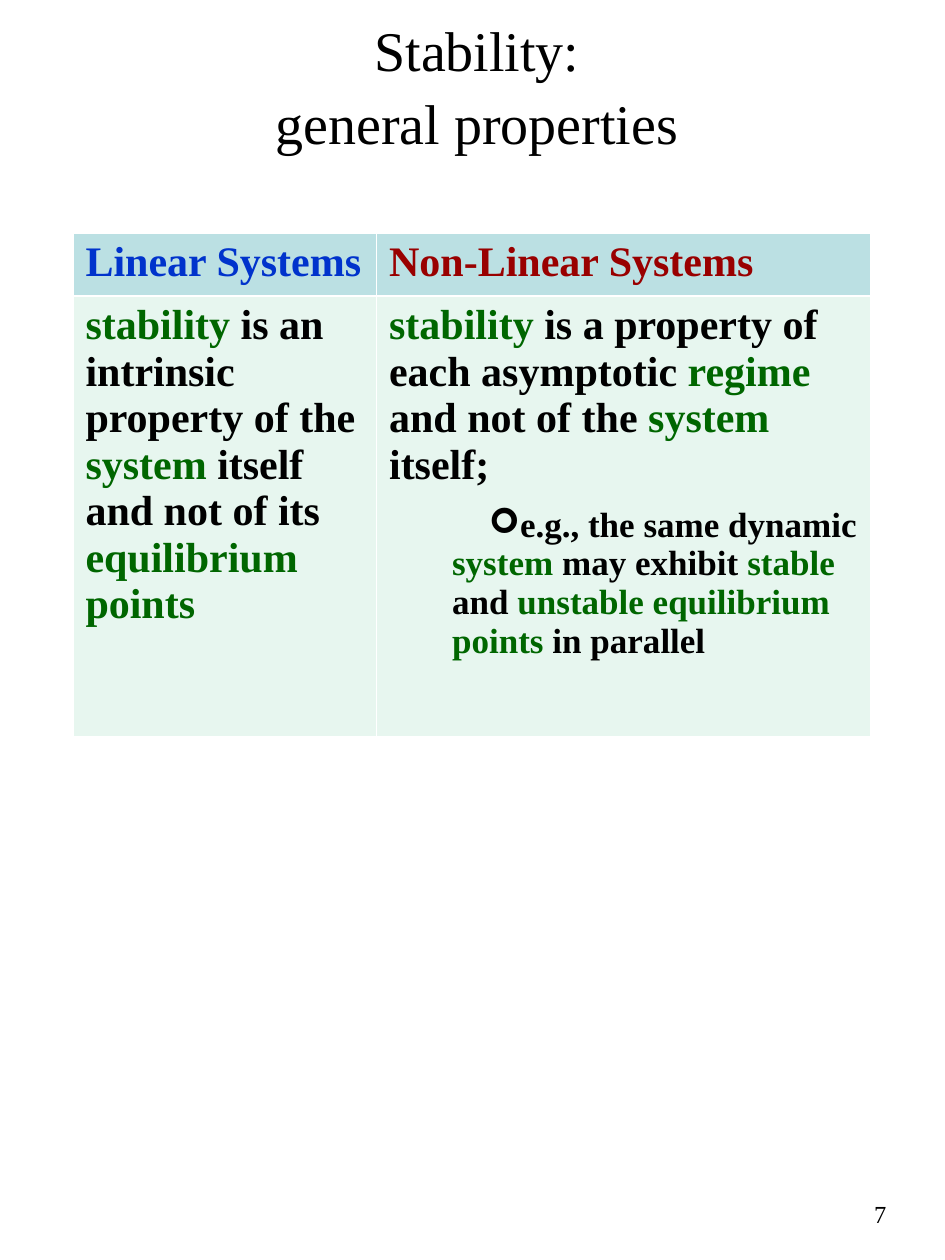
from lxml.etree import SubElement
from pptx import Presentation
from pptx.dml.color import RGBColor
from pptx.enum.text import MSO_ANCHOR, PP_ALIGN
from pptx.oxml.ns import qn
from pptx.util import Cm, Pt

FONT = "Times New Roman"
BLACK, GREEN = "000000", "006600"
BLUE, RED = "0033CC", "990000"
HEAD, BODY = "BBE0E3", "E7F6EF"

LINEAR = ("*stability* is an intrinsic property of the *system* itself "
          "and not of its *equilibrium points*")
OTHER = ("*stability* is a property of each asymptotic *regime* "
         "and not of the *system* itself;")
CASE = ("e.g., the same dynamic *system* may exhibit *stable* and "
        "*unstable equilibrium points* in parallel")


def paint(hue):
    return RGBColor.from_string(hue)


def write(para, text, size=24, color=BLACK, bold=False,
          align=PP_ALIGN.LEFT, before=0, spacing=None):
    """Fill a paragraph; words between asterisks turn green."""
    para.alignment = align
    para.space_before = Pt(before)
    if spacing:
        para.line_spacing = spacing
    for i, part in enumerate(text.split("*")):
        if not part:
            continue
        for j, line in enumerate(part.split("\n")):
            if j:
                para.add_line_break()
            run = para.add_run()
            run.text = line
            font = run.font
            font.name, font.size, font.bold = FONT, Pt(size), bold
            font.color.rgb = paint(GREEN if i % 2 else color)


def bullet(para, char, left, first):
    props = para._p.get_or_add_pPr()
    props.set("marL", str(left))
    props.set("indent", str(first))
    SubElement(props, qn("a:buFont"), typeface="Wingdings")
    SubElement(props, qn("a:buChar"), char=char)


def label(slide, text, left, top, width, height, anchor, **style):
    box = slide.shapes.add_textbox(Cm(left), Cm(top), Cm(width), Cm(height))
    frame = box.text_frame
    frame.word_wrap = True
    frame.vertical_anchor = anchor
    write(frame.paragraphs[0], text, **style)


def fill(cell, text, hue, **style):
    cell.fill.solid()
    cell.fill.fore_color.rgb = paint(hue)
    write(cell.text_frame.paragraphs[0], text, bold=True, **style)


def compare(slide):
    """Table of linear against non-linear systems."""
    cols, rows = (6.12, 9.96), (1.27, 8.89)
    table = slide.shapes.add_table(2, 2, Cm(1.47), Cm(4.7),
                                   Cm(sum(cols)), Cm(sum(rows))).table
    for col, width in zip(table.columns, cols):
        col.width = Cm(width)
    for row, height in zip(table.rows, rows):
        row.height = Cm(height)
    fill(table.cell(0, 0), "Linear Systems", HEAD, color=BLUE)
    fill(table.cell(0, 1), "Non-Linear Systems", HEAD, color=RED)
    fill(table.cell(1, 0), LINEAR, BODY)
    fill(table.cell(1, 1), OTHER, BODY)
    para = table.cell(1, 1).text_frame.add_paragraph()
    para.level = 1
    bullet(para, "➢", Cm(1.27), Cm(0.74))
    write(para, CASE, size=20, bold=True, before=10)


def main():
    deck = Presentation()
    deck.slide_width, deck.slide_height = Cm(19.05), Cm(25.4)
    slide = deck.slides.add_slide(deck.slide_layouts[6])
    label(slide, "Stability:\ngeneral properties", 1.52, 0.5, 16.2, 2.34,
          MSO_ANCHOR.MIDDLE, size=32, align=PP_ALIGN.CENTER, spacing=1.08)
    label(slide, "7", 13.67, 23.14, 4.45, 1.75,
          MSO_ANCHOR.BOTTOM, size=14, align=PP_ALIGN.RIGHT)
    compare(slide)
    deck.save("out.pptx")


if __name__ == "__main__":
    main()
